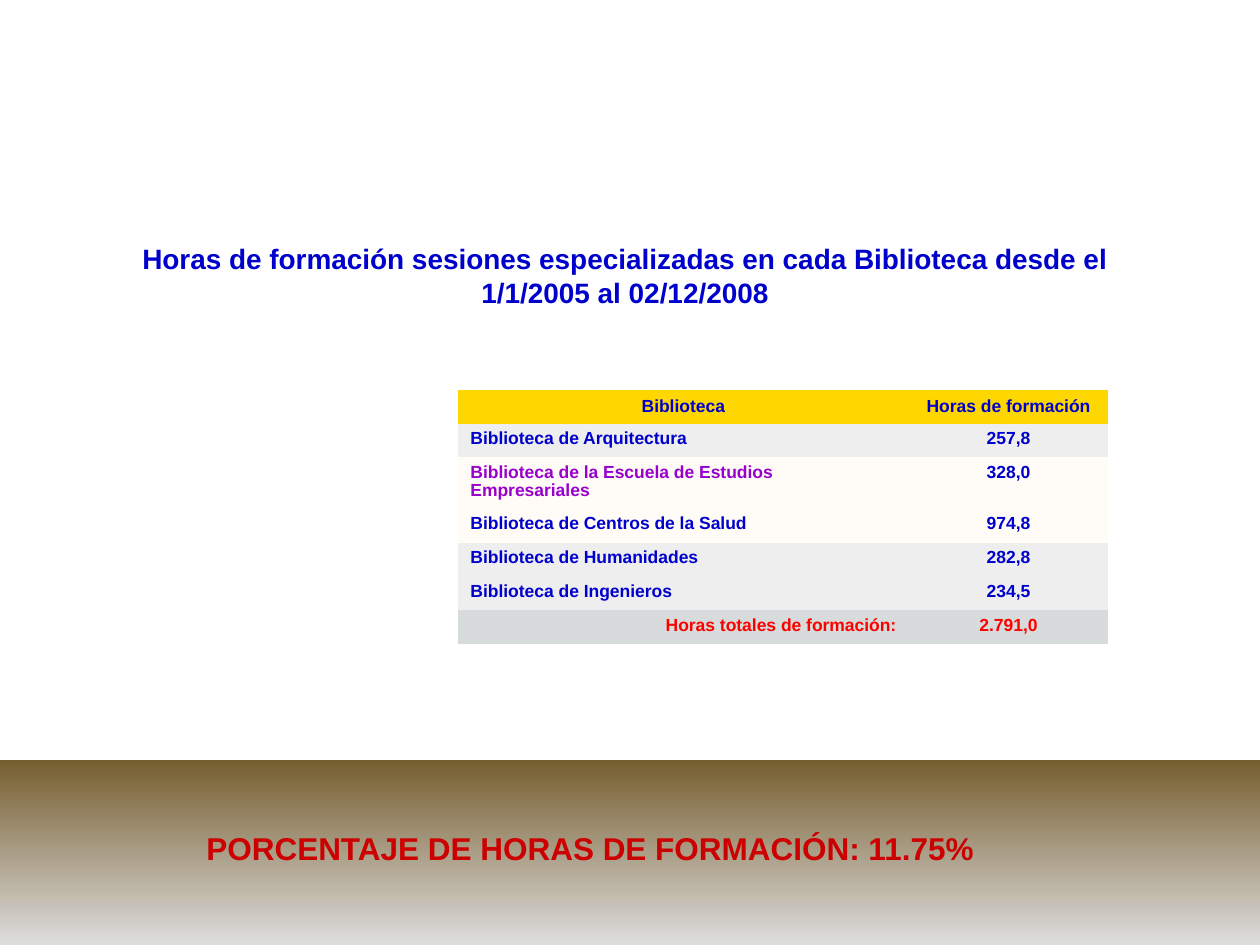
from dataclasses import dataclass

from pptx import Presentation
from pptx.dml.color import RGBColor as RGB
from pptx.enum.shapes import MSO_SHAPE as SHAPE
from pptx.enum.text import MSO_ANCHOR as ANCHOR, PP_ALIGN as ALIGN
from pptx.util import Cm, Pt

NO_GRID_STYLE = "{2D5ABB26-0587-4C30-8999-92F81FD0307C}"


@dataclass(frozen=True)
class Theme:
    font: str = "Arial"
    blue: str = "0000CC"
    purple: str = "9900CC"
    red: str = "FF0000"
    dark_red: str = "CC0000"
    gold: str = "FFD700"
    grey: str = "EEEEEE"
    cream: str = "FFFBF7"
    total: str = "D7DBDB"
    band: tuple = ("765E2F", "DDDDDD")
    title_size: int = 16
    result_size: int = 18
    table_size: int = 10
    table_spacing: float = 0.93


class Builder:
    def __init__(self, slide, theme):
        self.s = slide
        self.theme = theme

    def set_text(self, tf, text, size, color, align=ALIGN.CENTER):
        tf.text = text
        p = tf.paragraphs[0]
        p.alignment = align
        font = p.runs[0].font
        font.name, font.size, font.bold = self.theme.font, Pt(size), True
        font.color.rgb = RGB.from_string(color)
        return p

    def band(self, x, y, w, h):
        sp = self.s.shapes.add_shape(SHAPE.RECTANGLE, Cm(x), Cm(y), Cm(w), Cm(h))
        sp.shadow.inherit = False
        sp.line.fill.background()
        sp.fill.gradient()
        sp.fill.gradient_angle = 270
        for stop, color in zip(sp.fill.gradient_stops, self.theme.band):
            stop.color.rgb = RGB.from_string(color)

    def text(self, x, y, w, h, text, size, color):
        tf = self.s.shapes.add_textbox(Cm(x), Cm(y), Cm(w), Cm(h)).text_frame
        tf.word_wrap = True
        self.set_text(tf, text, size, color)

    def table(self, x, y, widths, row_height, rows):
        """Each row: label, value, fill, label colour, value colour, label alignment."""
        t = self.theme
        table = self.s.shapes.add_table(
            len(rows), len(widths), Cm(x), Cm(y),
            Cm(sum(widths)), Cm(row_height * len(rows))).table
        table._tbl.tblPr[0].text = NO_GRID_STYLE
        for column, width in zip(table.columns, widths):
            column.width = Cm(width)
        for i, (label, value, fill, label_color, value_color, align) in enumerate(rows):
            table.rows[i].height = Cm(row_height)
            texts = (label, label_color, align), (value, value_color, ALIGN.CENTER)
            for cell, (text, color, al) in zip(table.rows[i].cells, texts):
                cell.fill.solid()
                cell.fill.fore_color.rgb = RGB.from_string(fill)
                cell.vertical_anchor = ANCHOR.TOP if i else ANCHOR.MIDDLE
                p = self.set_text(cell.text_frame, text, t.table_size, color, al)
                p.line_spacing = t.table_spacing


def main():
    prs = Presentation()
    prs.slide_width, prs.slide_height = Cm(25.4), Cm(19.05)
    t = Theme()
    b = Builder(prs.slides.add_slide(prs.slide_layouts[6]), t)

    # Gradient band at the foot
    b.band(0, 15.32, 25.4, 3.73)

    # Title
    b.text(2.1, 4.75, 21, 2.29,
           "Horas de formación sesiones especializadas en cada Biblioteca "
           "desde el 1/1/2005 al 02/12/2008", t.title_size, t.blue)

    # Training hours per library
    libraries = [
        ("Biblioteca de Arquitectura", "257,8", t.grey, t.blue),
        ("Biblioteca de la Escuela de Estudios Empresariales", "328,0", t.cream, t.purple),
        ("Biblioteca de Centros de la Salud", "974,8", t.cream, t.blue),
        ("Biblioteca de Humanidades", "282,8", t.grey, t.blue),
        ("Biblioteca de Ingenieros", "234,5", t.grey, t.blue),
    ]
    rows = [
        (" Biblioteca ", " Horas de formación ", t.gold, t.blue, t.blue, ALIGN.CENTER),
        *((*library, t.blue, ALIGN.LEFT) for library in libraries),
        ("Horas totales de formación:", "2.791,0", t.total, t.red, t.red, ALIGN.RIGHT),
    ]
    b.table(9.23, 7.86, (9.09, 4.02), 0.68, rows)

    # Result
    b.text(1.5, 16.59, 20.8, 1.02,
           "PORCENTAJE DE HORAS DE FORMACIÓN: 11.75%", t.result_size, t.dark_red)

    prs.save("out.pptx")


if __name__ == "__main__":
    main()
